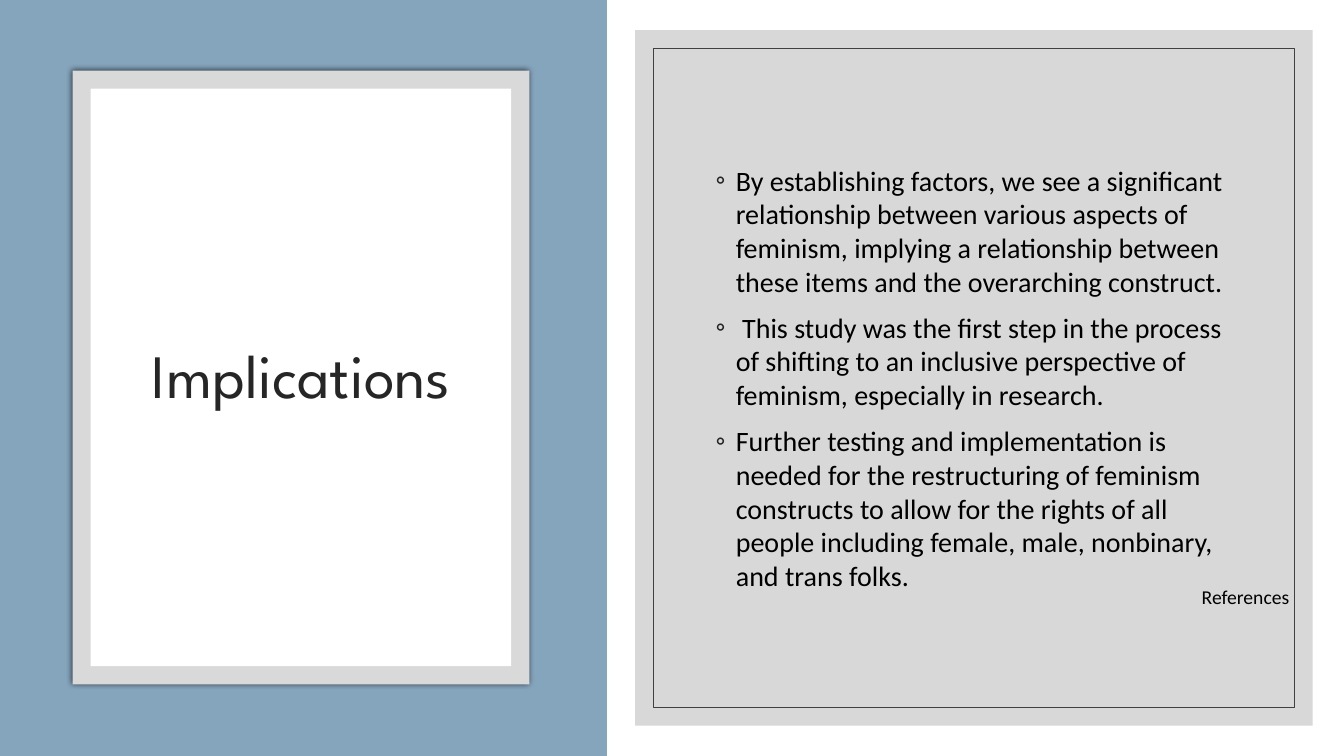
from dataclasses import dataclass

from lxml import etree
from pptx import Presentation
from pptx import util as u
from pptx.dml.color import RGBColor
from pptx.enum import shapes, text
from pptx.oxml import ns


@dataclass(frozen=True)
class Theme:
    white: str = "FFFFFF"
    blue: str = "85A5BD"
    mat: str = "D9D9D9"
    panel: str = "BFBFBF"
    outline: str = "404040"
    heading: str = "262626"
    black: str = "000000"
    heading_font: str = "League Spartan"
    body_font: str = "Calibri"
    heading_size: int = 44
    body_size: int = 20
    note_size: int = 14


THEME = Theme()
INSET = 0.18
IMPLICATIONS = [
    "By establishing factors, we see a significant relationship between various aspects of feminism, "
    "implying a relationship between these items and the overarching construct.",
    " This study was the first step in the process of shifting to an inclusive perspective of feminism, "
    "especially in research.",
    "Further testing and implementation is needed for the restructuring of feminism constructs to allow "
    "for the rights of all people including female, male, nonbinary, and trans folks.",
]


def apply(target, values):
    for name, value in values.items():
        setattr(target, name, value)


def add_xml(parent, tag, **attributes):
    child = etree.SubElement(parent, ns.qn(tag))
    for name, value in attributes.items():
        child.set(name, str(value))
    return child


def inches(box):
    return [u.Inches(length) for length in box]


def shrink(box, margin):
    left, top, width, height = box
    return left + margin, top + margin, width - 2 * margin, height - 2 * margin


def add_panel(slide, box, fill=None, line=None):
    panel = slide.shapes.add_shape(shapes.MSO_SHAPE.RECTANGLE, *inches(box))
    panel.shadow.inherit = False
    if fill:
        panel.fill.solid()
        panel.fill.fore_color.rgb = RGBColor.from_string(fill)
    else:
        panel.fill.background()
    if line:
        panel.line.color.rgb = RGBColor.from_string(line)
        panel.line.width = u.Pt(0.5)
    else:
        panel.line.fill.background()
    return panel


def write(paragraph, words, font, size, color):
    run = paragraph.add_run()
    run.text = words
    apply(run.font, {"name": font, "size": u.Pt(size), "bold": False})
    run.font.color.rgb = RGBColor.from_string(color)


def add_title_card(slide, box):
    mat = add_panel(slide, box, THEME.mat)
    effects = mat.element.spPr.find(ns.qn("a:effectLst"))
    shadow = add_xml(effects, "a:outerShdw", blurRad=u.Pt(4), dist=0, dir=0, algn="ctr", rotWithShape=0)
    shade = add_xml(shadow, "a:srgbClr", val=THEME.black)
    add_xml(shade, "a:alpha", val=66000)
    card = add_panel(slide, shrink(box, INSET), THEME.white)

    left, top, _, _ = box
    title = slide.shapes.title
    card.element.addnext(title.element)
    place = inches((left + 0.36, top + 0.6, 3.82, 4.91))
    apply(title, dict(zip(("left", "top", "width", "height"), place)))
    apply(title.text_frame, {
        "word_wrap": True,
        "auto_size": text.MSO_AUTO_SIZE.NONE,
        "vertical_anchor": text.MSO_ANCHOR.MIDDLE,
    })
    heading = title.text_frame.paragraphs[0]
    apply(heading, {"alignment": text.PP_ALIGN.CENTER, "line_spacing": 0.9})
    write(heading, "Implications", THEME.heading_font, THEME.heading_size, THEME.heading)


def add_bullet(paragraph):
    properties = paragraph._p.get_or_add_pPr()
    properties.set("marL", str(u.Inches(0.2)))
    properties.set("indent", str(-u.Inches(0.2)))
    color = add_xml(properties, "a:buClr")
    add_xml(color, "a:srgbClr", val=THEME.heading)
    add_xml(properties, "a:buFont", typeface=THEME.body_font)
    add_xml(properties, "a:buChar", char="◦")


def add_implications(slide, box):
    panel = add_panel(slide, box, THEME.panel)
    tint = panel.element.spPr.find(ns.qn("a:solidFill"))[0]
    add_xml(tint, "a:alpha", val=60000)
    add_panel(slide, shrink(box, INSET), line=THEME.outline)

    left, top, _, _ = box
    body = slide.shapes.add_textbox(*inches((left + 0.7, top + 0.72, 5.33, 5.45))).text_frame
    apply(body, {"word_wrap": True, "vertical_anchor": text.MSO_ANCHOR.MIDDLE})
    for index, implication in enumerate(IMPLICATIONS):
        paragraph = body.add_paragraph() if index else body.paragraphs[0]
        paragraph.space_before = u.Pt(9)
        add_bullet(paragraph)
        write(paragraph, implication, THEME.body_font, THEME.body_size, THEME.black)


def add_references(slide, box):
    references = slide.shapes.add_textbox(*inches(box)).text_frame
    apply(references, {"word_wrap": True, "auto_size": text.MSO_AUTO_SIZE.SHAPE_TO_FIT_TEXT})
    write(references.paragraphs[0], "References", THEME.body_font, THEME.note_size, THEME.black)


def main():
    deck = Presentation()
    apply(deck, {"slide_width": u.Inches(13.33), "slide_height": u.Inches(7.5)})
    slide = deck.slides.add_slide(deck.slide_layouts.get_by_name("Title Only"))
    add_panel(slide, (0, 0, 13.33, 7.5), THEME.white)
    add_panel(slide, (-0.01, 0, 6.03, 7.5), THEME.blue)
    add_title_card(slide, (0.72, 0.7, 4.53, 6.09))
    add_implications(slide, (6.3, 0.3, 6.72, 6.9))
    add_references(slide, (11.82, 5.75, 1.59, 0.34))
    deck.save("out.pptx")


if __name__ == "__main__":
    main()
